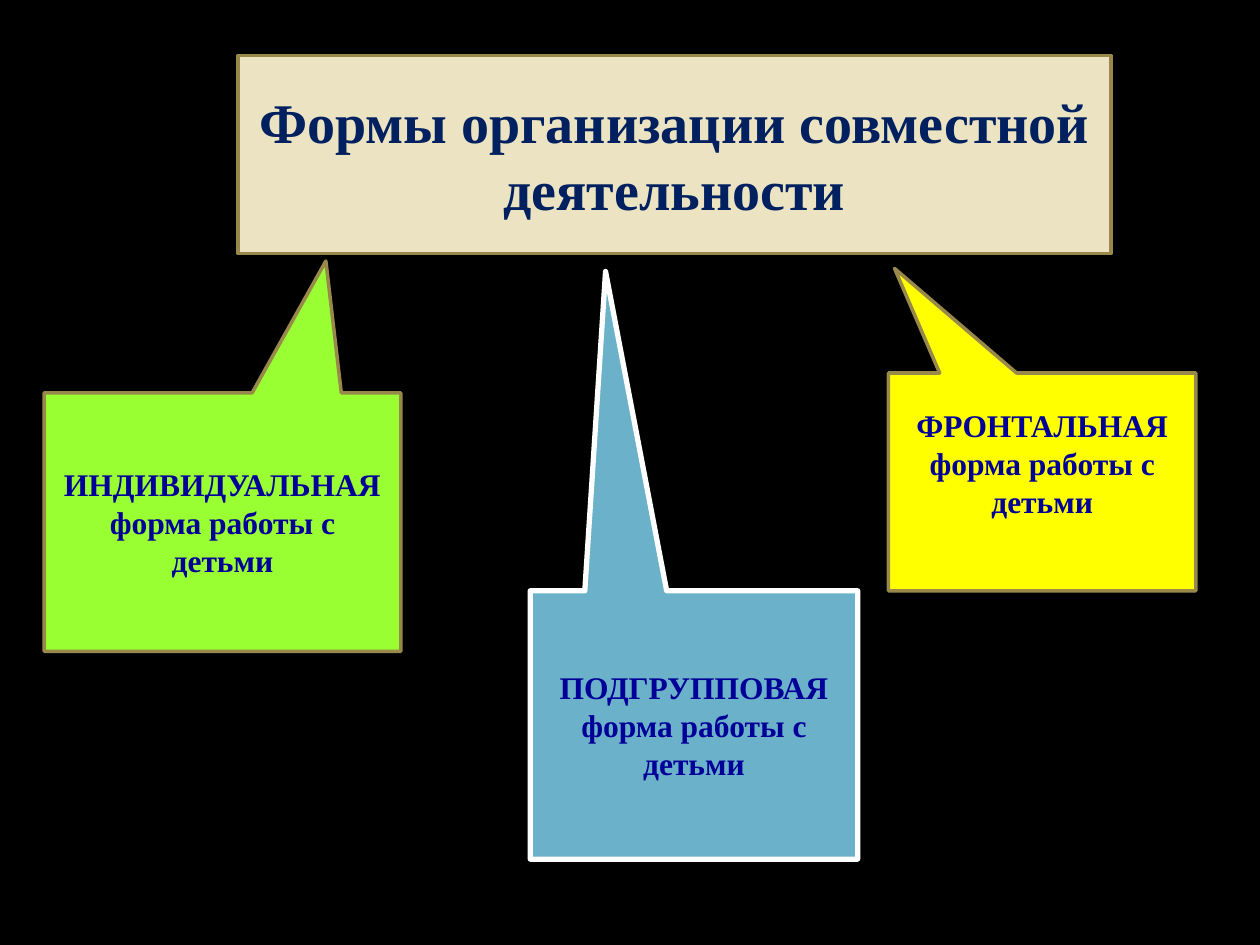
from pptx import Presentation
from pptx import util as u
from pptx.dml.color import RGBColor
from pptx.enum import shapes as s, text as t

FONT = "Times New Roman"
SAND = "98894B"
NAVY = "000099"


def paint(part, color):
    part.solid()
    part.fore_color.rgb = RGBColor.from_string(color)


def add_box(slide, kind, place, words, fill, line=SAND, width=2, size=18, ink=NAVY):
    box = slide.shapes.add_shape(kind, *[u.Cm(n) for n in place])
    box.shadow.inherit = False
    paint(box.fill, fill)
    paint(box.line.fill, line)
    box.line.width = u.Pt(width)
    frame = box.text_frame
    frame.text = words
    frame.word_wrap = True
    frame.vertical_anchor = t.MSO_ANCHOR.MIDDLE
    para = frame.paragraphs[0]
    para.alignment = t.PP_ALIGN.CENTER
    font = para.runs[0].font
    font.name, font.size, font.bold = FONT, u.Pt(size), True
    paint(font.fill, ink)
    return box


def add_callout(slide, place, tip, name, fill, **style):
    words = f"{name} форма работы с детьми"
    kind = s.MSO_SHAPE.RECTANGULAR_CALLOUT
    box = add_box(slide, kind, place, words, fill, **style)
    box.adjustments[0], box.adjustments[1] = tip
    return box


def main():
    deck = Presentation()
    deck.slide_width, deck.slide_height = u.Cm(25.4), u.Cm(19.05)
    slide = deck.slides.add_slide(deck.slide_layouts[6])
    paint(slide.background.fill, "000000")

    add_box(slide, s.MSO_SHAPE.RECTANGLE, (4.8, 1.12, 17.6, 3.99),
            "Формы организации совместной деятельности",
            "EBE3C2", size=32, ink="002060")
    add_callout(slide, (0.89, 7.92, 7.19, 5.21), (0.29, -1.01),
                "ИНДИВИДУАЛЬНАЯ", "99FF33")
    add_callout(slide, (10.69, 11.91, 6.6, 5.41), (-0.27, -1.69),
                "ПОДГРУППОВАЯ", "6BB1C9", line="FFFFFF", width=3)
    front = add_callout(slide, (17.91, 7.52, 6.2, 4.39), (-0.48, -0.98),
                        "ФРОНТАЛЬНАЯ", "FFFF00")
    front.text_frame.margin_bottom = u.Cm(0.89)

    deck.save("out.pptx")


if __name__ == "__main__":
    main()
